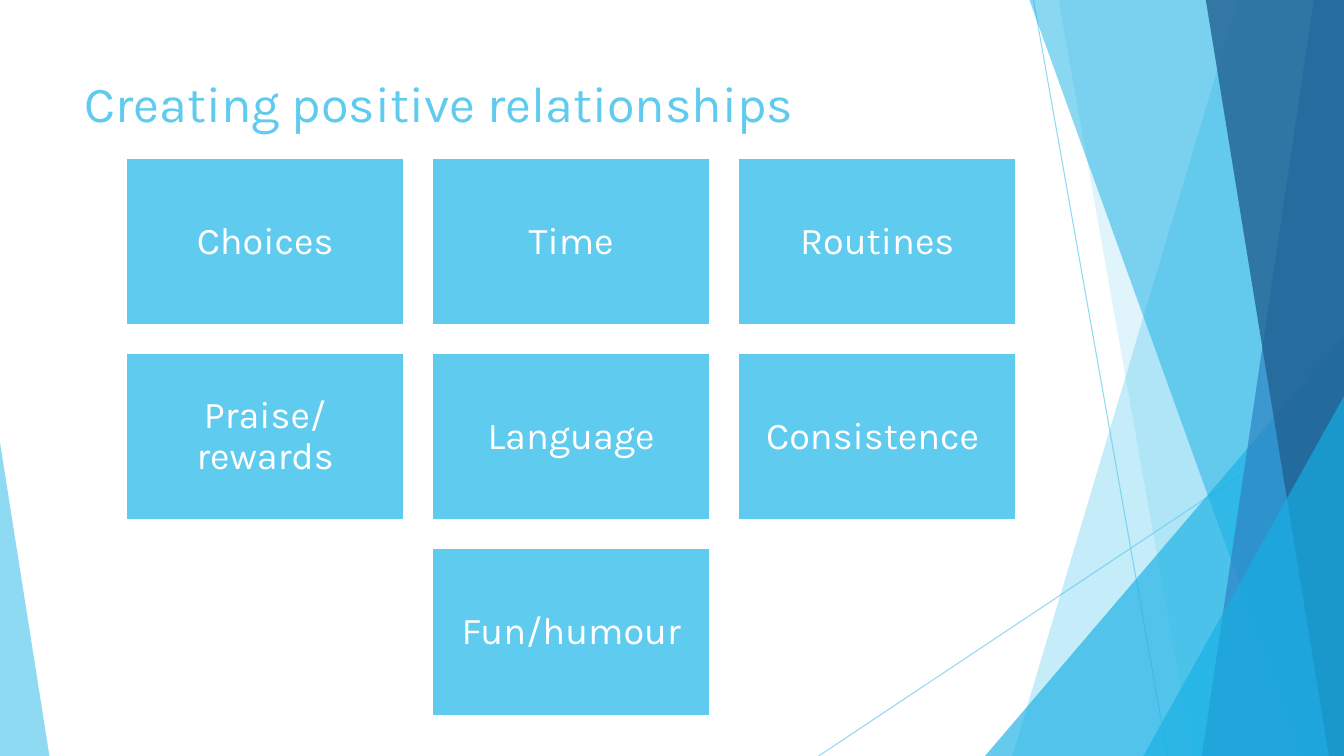
from lxml import etree
from pptx import Presentation
from pptx.dml.color import RGBColor
from pptx.enum.shapes import MSO_CONNECTOR, MSO_SHAPE
from pptx.enum.text import MSO_ANCHOR, PP_ALIGN
from pptx.oxml.ns import qn
from pptx.util import Inches, Pt

SKY = RGBColor(0x5F, 0xCB, 0xEF)
CYAN = RGBColor(0x17, 0xB0, 0xE4)
BLUE = RGBColor(0x2E, 0x83, 0xC3)
NAVY = RGBColor(0x22, 0x62, 0x92)
WHITE = RGBColor(0xFF, 0xFF, 0xFF)
FONT = "Karla"
SLIDE_W, SLIDE_H = 13.33, 7.5

# Content
TITLE = "Creating positive relationships"
CARD_ROWS = [
    ["Choices", "Time", "Routines"],
    ["Praise/rewards", "Language", "Consistence "],
    ["Fun/humour"],
]

# Decoration: lines (x1, y1, x2, y2)
LINES = [(10.25, 0, 11.58, 7.5), (13.33, 4.03, 8.12, 7.5)]
# Facets from back to front, all reaching the bottom edge
# band: top x, bottom x; triangle: left, top, width, apex
FACETS = [
    ("band", (12.28, 10.04), SKY, 36),
    ("band", (10.5, 11.83), SKY, 20),
    ("triangle", (9.77, 3.33, 3.56, 1), CYAN, 66),
    ("band", (10.21, 12.91), CYAN, 50),
    ("band", (13.03, 11.92), BLUE, 70),
    ("band", (11.96, 13.18), NAVY, 80),
    ("triangle", (11.34, 3.93, 1.99, 1), CYAN, 66),
    ("triangle", (0, 4.39, 0.49, 0), SKY, 70),
]

# Card grid
CARD_W, CARD_H = 2.76, 1.66
GRID_X, GRID_Y = 1.25, 1.57
STEP_X, STEP_Y = 3.035, 1.935
COLUMNS = 3


def set_alpha(element, percent):
    color = next(element.iter(qn("a:srgbClr")))
    etree.SubElement(color, qn("a:alpha")).set("val", str(percent * 1000))


def add_text(sp, text, size, color, align=PP_ALIGN.LEFT, anchor=MSO_ANCHOR.TOP,
             inset=None, spacing=None):
    tf = sp.text_frame
    tf.word_wrap = True
    tf.vertical_anchor = anchor
    if inset is not None:
        tf.margin_left = tf.margin_right = Inches(inset)
        tf.margin_top = tf.margin_bottom = Inches(inset)
    p = tf.paragraphs[0]
    p.alignment = align
    p.line_spacing = spacing
    r = p.add_run()
    r.text = text
    r.font.name = FONT
    r.font.size = Pt(size)
    r.font.color.rgb = color


def add_line(s, ends):
    line = s.shapes.add_connector(MSO_CONNECTOR.STRAIGHT, *map(Inches, ends))
    line.line.color.rgb = SKY
    line.line.width = Pt(0.75)
    sp_pr = line._element.spPr
    set_alpha(sp_pr, 70)
    etree.SubElement(sp_pr, qn("a:effectLst"))


def add_facet(s, kind, geometry, color, alpha):
    if kind == "band":
        top_x, bottom_x = geometry
        outline = s.shapes.build_freeform(Inches(top_x), 0)
        corners = [(SLIDE_W, 0), (SLIDE_W, SLIDE_H), (bottom_x, SLIDE_H)]
        outline.add_line_segments([(Inches(x), Inches(y)) for x, y in corners])
        sp = outline.convert_to_shape()
    else:
        left, top, width, apex = geometry
        sp = s.shapes.add_shape(MSO_SHAPE.ISOSCELES_TRIANGLE, Inches(left), Inches(top),
                                Inches(width), Inches(SLIDE_H - top))
        sp.adjustments[0] = apex
    sp.shadow.inherit = False
    sp.fill.solid()
    sp.fill.fore_color.rgb = color
    set_alpha(sp._element.spPr, alpha)
    sp.line.fill.background()


def add_card(s, text, left, top):
    sp = s.shapes.add_shape(MSO_SHAPE.RECTANGLE, Inches(left), Inches(top),
                            Inches(CARD_W), Inches(CARD_H))
    sp.shadow.inherit = False
    sp.fill.solid()
    sp.fill.fore_color.rgb = SKY
    sp.line.color.rgb = WHITE
    sp.line.width = Pt(1.5)
    add_text(sp, text, 27, WHITE, align=PP_ALIGN.CENTER, anchor=MSO_ANCHOR.MIDDLE,
             inset=0.11, spacing=0.9)


def main():
    prs = Presentation()
    prs.slide_width, prs.slide_height = Inches(SLIDE_W), Inches(SLIDE_H)
    s = prs.slides.add_slide(prs.slide_layouts[6])

    # Background decoration
    for ends in LINES:
        add_line(s, ends)
    for facet in FACETS:
        add_facet(s, *facet)

    # Title
    title = s.shapes.add_textbox(Inches(0.74), Inches(0.67), Inches(9.4), Inches(1.13))
    add_text(title, TITLE, 36, SKY)

    # Cards, with a short row centred
    for row, names in enumerate(CARD_ROWS):
        first = (COLUMNS - len(names)) / 2
        for col, name in enumerate(names):
            add_card(s, name, GRID_X + (first + col) * STEP_X, GRID_Y + row * STEP_Y)

    prs.save("out.pptx")


if __name__ == "__main__":
    main()
